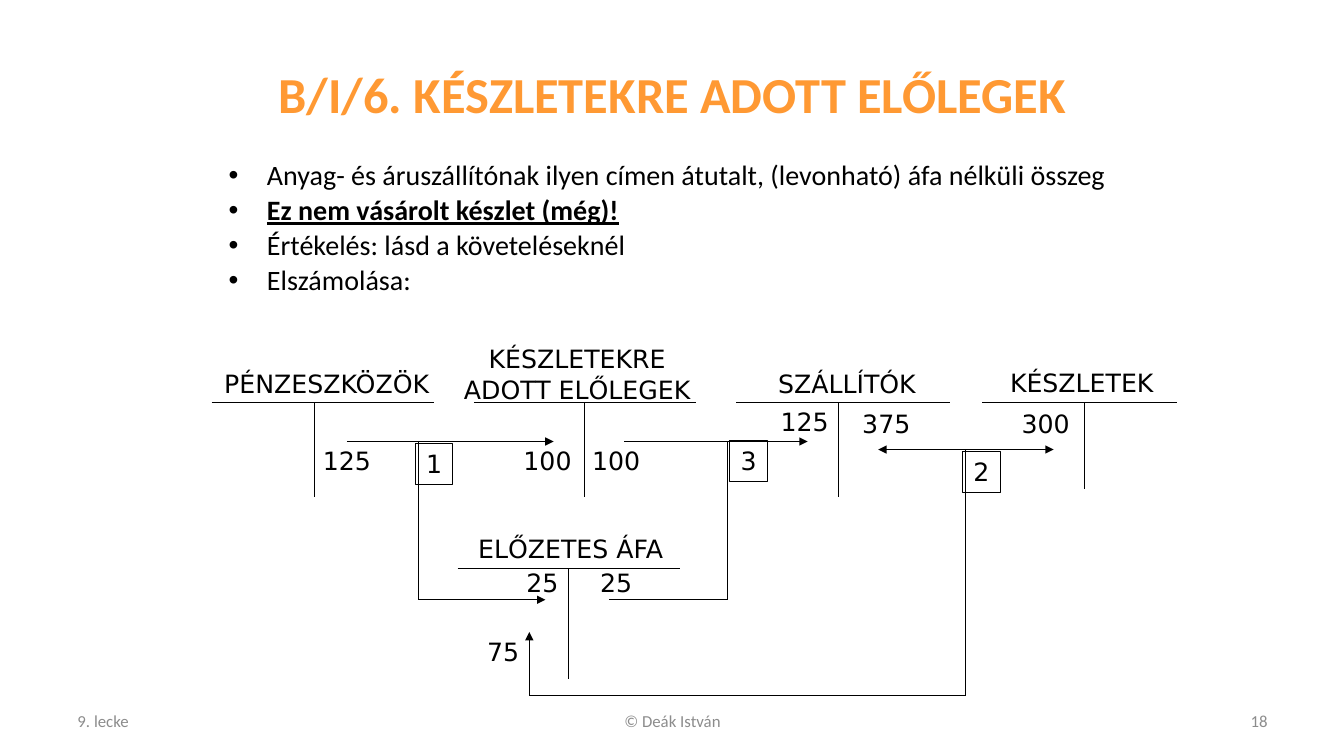
"""Build the slide on advances paid for inventories, with its T-accounts."""
import pptx
import pptx.dml.color
import pptx.enum.shapes
import pptx.enum.text
import pptx.oxml
import pptx.oxml.ns
import pptx.util

Inches = pptx.util.Inches
ALIGN = pptx.enum.text.PP_ALIGN
ANCHOR = pptx.enum.text.MSO_ANCHOR

THEME = {
    "heading_font": "Calibri", "diagram_font": "DejaVu Sans",
    "title_size": 36, "body_size": 20, "diagram_size": 18, "footer_size": 12,
    "title": "FF9933", "ink": "000000", "footer": "8C8C8C", "line_width": 0.75,
}

TITLE = "B/I/6. KÉSZLETEKRE ADOTT ELŐLEGEK"
BULLETS = [
    "Anyag- és áruszállítónak ilyen címen átutalt, (levonható) áfa nélküli összeg",
    "Ez nem vásárolt készlet (még)!",
    "Értékelés: lásd a követeléseknél",
    "Elszámolása:",
]
KEY_BULLET = 1
FOOTERS = [
    ("9. lecke", 0.67, 3.11, ALIGN.LEFT),
    ("© Deák István", 4.56, 4.22, ALIGN.CENTER),
    ("18", 9.56, 3.11, ALIGN.RIGHT),
]
# fmt: off
ACCOUNTS = [
    {"name": ["PÉNZESZKÖZÖK"], "label": (2.1, 3.61, 2.28), "bar": (2.1, 4.3, 3.99), "stem": (3.12, 4.93)},
    {"name": ["KÉSZLETEKRE", "ADOTT ELŐLEGEK"], "label": (4.49, 3.36, 2.47), "bar": (4.7, 6.9, 3.99), "stem": (5.8, 4.93)},
    {"name": ["SZÁLLÍTÓK"], "label": (7.59, 3.61, 1.62), "bar": (7.3, 9.42, 3.99), "stem": (8.32, 4.93)},
    {"name": ["KÉSZLETEK"], "label": (9.9, 3.59, 1.66), "bar": (9.74, 11.67, 3.99), "stem": (10.76, 4.85)},
    {"name": ["ELŐZETES ÁFA"], "label": (4.62, 5.24, 2.08), "bar": (4.54, 6.74, 5.64), "stem": (5.64, 6.74)},
]
AMOUNTS = [
    ("125", 3.1, 4.37), ("100", 5.09, 4.37), ("100", 5.77, 4.37),
    ("125", 7.64, 3.98), ("375", 8.45, 4), ("300", 10.03, 4),
    ("25", 5.12, 5.58), ("25", 5.85, 5.58), ("75", 4.73, 6.26),
]
AMOUNT_WIDTHS = {2: 0.52, 3: 0.68}
ENTRY_ROUTES = [
    {"points": [(3.44, 4.38), (5.49, 4.38)], "arrows": ["tailEnd"]},
    {"points": [(4.15, 4.38), (4.15, 5.95), (5.41, 5.95)], "arrows": ["tailEnd"]},
    {"points": [(8.71, 4.46), (10.45, 4.46)], "arrows": ["headEnd", "tailEnd"]},
    {"points": [(9.58, 4.46), (9.58, 6.9), (5.25, 6.9), (5.25, 6.27)], "arrows": ["tailEnd"]},
    {"points": [(6.19, 4.38), (8.01, 4.38)], "arrows": ["tailEnd"]},
    {"points": [(6.04, 5.95), (7.22, 5.95), (7.22, 4.38)], "arrows": []},
]
# fmt: on
ENTRY_NUMBERS = [("1", 4.12, 4.4), ("2", 9.55, 4.48), ("3", 7.24, 4.37)]
ENTRY_BOX = (0.37, 0.41)
LINE_HEIGHT, EXTRA_LINE = 0.4, 0.3


def color(name):
    return pptx.dml.color.RGBColor.from_string(THEME[name])


def add_child(parent, tag, **attributes):
    child = pptx.oxml.parse_xml(f"<a:{tag} {pptx.oxml.ns.nsdecls('a')}/>")
    for key, value in attributes.items():
        child.set(key, value)
    parent.append(child)


def write_text(shape, lines, *, font="diagram_font", size="diagram_size", ink="ink",
               bold=False, align=ALIGN.CENTER, anchor=ANCHOR.TOP, wrap=False):
    frame = shape.text_frame
    frame.word_wrap = wrap
    frame.vertical_anchor = anchor
    frame.text = "\n".join(lines)
    for paragraph in frame.paragraphs:
        paragraph.alignment = align
        text_font = paragraph.runs[0].font
        text_font.name = THEME[font]
        text_font.size = pptx.util.Pt(THEME[size])
        text_font.color.rgb = color(ink)
        text_font.bold = bold
    return frame


def add_text(slide, lines, left, top, width, height, **text_format):
    box = slide.shapes.add_textbox(*map(Inches, (left, top, width, height)))
    return write_text(box, lines, **text_format)


def add_line(slide, start, end, arrows=()):
    connector = slide.shapes.add_connector(
        pptx.enum.shapes.MSO_CONNECTOR.STRAIGHT, *map(Inches, (*start, *end)))
    connector.line.color.rgb = color("ink")
    connector.line.width = pptx.util.Pt(THEME["line_width"])
    for arrow in arrows:
        add_child(connector.line._get_or_add_ln(), arrow, type="triangle")
    add_child(connector._element.spPr, "effectLst")


def add_heading(slide):
    add_text(slide, [TITLE], 0.67, 0.3, 12, 1.25, font="heading_font",
             size="title_size", ink="title", bold=True, anchor=ANCHOR.MIDDLE, wrap=True)
    body = add_text(slide, BULLETS, 2.17, 1.55, 9, 1.81, font="heading_font",
                    size="body_size", align=ALIGN.LEFT, wrap=True)
    for paragraph in body.paragraphs:
        paragraph.line_spacing = 0.9
        paragraph.space_before = pptx.util.Pt(3.5)
        properties = paragraph._p.get_or_add_pPr()
        properties.set("marL", str(Inches(0.38)))
        properties.set("indent", str(-Inches(0.38)))
        add_child(properties, "buFont", typeface="Arial")
        add_child(properties, "buChar", char="•")
    key_font = body.paragraphs[KEY_BULLET].runs[0].font
    key_font.bold = key_font.underline = True


def add_account(slide, account):
    left, right, top = account["bar"]
    stem, bottom = account["stem"]
    add_line(slide, (left, top), (right, top))
    add_line(slide, (stem, top), (stem, bottom))
    height = LINE_HEIGHT + EXTRA_LINE * (len(account["name"]) - 1)
    add_text(slide, account["name"], *account["label"], height)


def add_entry_number(slide, number, left, top):
    box = slide.shapes.add_shape(
        pptx.enum.shapes.MSO_SHAPE.RECTANGLE, *map(Inches, (left, top, *ENTRY_BOX)))
    box.shadow.inherit = False
    box.fill.background()
    box.line.color.rgb = color("ink")
    box.line.width = pptx.util.Pt(THEME["line_width"])
    write_text(box, [number])


def main():
    presentation = pptx.Presentation()
    presentation.slide_width, presentation.slide_height = Inches(13.33), Inches(7.5)
    slide = presentation.slides.add_slide(presentation.slide_layouts[6])
    add_heading(slide)
    for text, left, width, align in FOOTERS:
        add_text(slide, [text], left, 6.95, width, 0.4, font="heading_font",
                 size="footer_size", ink="footer", align=align,
                 anchor=ANCHOR.MIDDLE, wrap=True)
    for account in ACCOUNTS:
        add_account(slide, account)
    for route in ENTRY_ROUTES:
        points = route["points"]
        for start, end in zip(points, points[1:]):
            add_line(slide, start, end, route["arrows"] if end == points[-1] else ())
    for number, left, top in ENTRY_NUMBERS:
        add_entry_number(slide, number, left, top)
    for amount, left, top in AMOUNTS:
        add_text(slide, [amount], left, top, AMOUNT_WIDTHS[len(amount)], LINE_HEIGHT)
    presentation.save("out.pptx")


if __name__ == "__main__":
    main()
